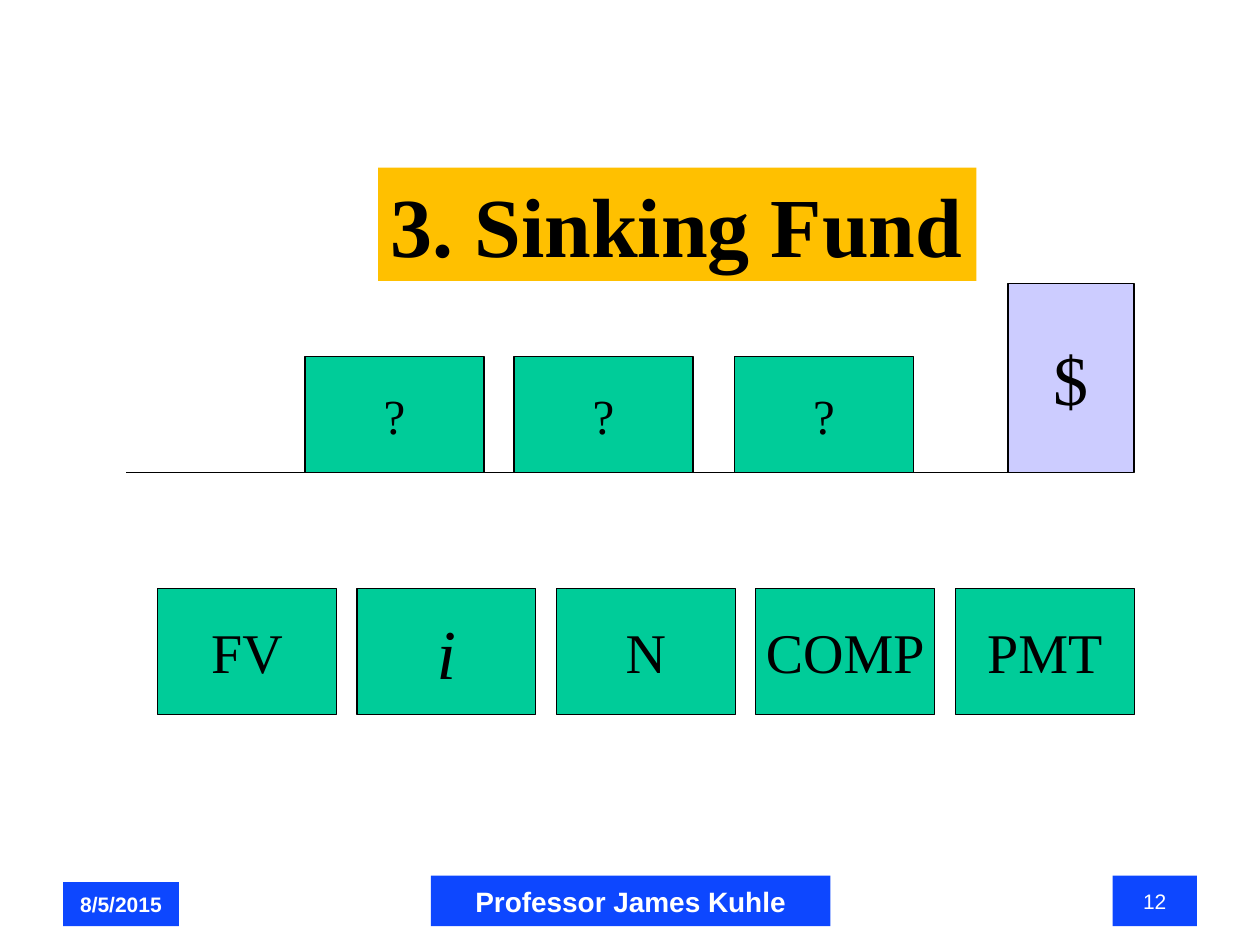
from pptx import Presentation
from pptx.dml.color import RGBColor
from pptx.enum.shapes import MSO_CONNECTOR, MSO_SHAPE
from pptx.enum.text import MSO_ANCHOR, MSO_AUTO_SIZE, PP_ALIGN
from pptx.oxml.ns import qn
from pptx.util import Inches, Pt

TITLE = "3. Sinking Fund"
PAYMENT_LEFTS = [2.42, 4.08, 5.83]
KEYS = [("FV", 32), ("i", 40), ("N", 32), ("COMP", 32), ("PMT", 32)]
FOOTERS = [  # text, left, width, height, size, bold
    ("8/5/2015", 0.5, 0.92, 0.35, 12, True),
    ("Professor James Kuhle", 3.42, 3.17, 0.4, 16, True),
    ("12", 8.83, 0.67, 0.4, 12, False),
]
THEME = {
    "serif": "Times New Roman", "sans": "Arial",
    "black": RGBColor(0, 0, 0), "white": RGBColor(255, 255, 255),
    "green": RGBColor(0x00, 0xCC, 0x99), "lilac": RGBColor(0xCC, 0xCC, 0xFF),
    "gold": RGBColor(0xFF, 0xC0, 0x00), "blue": RGBColor(0x0D, 0x47, 0xFF),
    "title": 48, "payment": 28, "goal": 40,
}
BOX_W, PAYMENT_H, GOAL_H = 1.42, 0.92, 1.5
AXIS_Y, KEY_TOP, FOOTER_BOTTOM = 3.75, 4.67, 7.35
KEY_LEFT, KEY_STEP = 1.25, 1.583


def fill(sp, color):
    sp.fill.solid()
    sp.fill.fore_color.rgb = THEME[color]


def write(sp, text, size, font="serif", color="black", bold=False,
          italic=False, align=PP_ALIGN.CENTER, anchor=MSO_ANCHOR.MIDDLE, wrap=True):
    tf = sp.text_frame
    tf.text = text
    tf.word_wrap = wrap
    tf.vertical_anchor = anchor
    p = tf.paragraphs[0]
    p.alignment = align
    p.font.name = THEME[font]
    p.font.size = Pt(size)
    p.font.bold = bold
    p.font.italic = italic
    p.font.color.rgb = THEME[color]


def add_box(s, left, top, width, height, color, kind=MSO_SHAPE.RECTANGLE, outlined=True):
    sp = s.shapes.add_shape(kind, Inches(left), Inches(top), Inches(width), Inches(height))
    sp.shadow.inherit = False
    fill(sp, color)
    if outlined:
        sp.line.color.rgb = THEME["black"]
        sp.line.width = Pt(0.75)
    else:
        sp.line.fill.background()
    return sp


def add_title(s):
    sp = s.shapes.title
    sp.left, sp.top, sp.width, sp.height = map(Inches, (3, 1.33, 4.75, 0.9))
    fill(sp, "gold")
    write(sp, TITLE, THEME["title"], bold=True, align=PP_ALIGN.LEFT, anchor=MSO_ANCHOR.TOP)
    sp.text_frame.auto_size = MSO_AUTO_SIZE.NONE


def add_timeline(s):
    process = MSO_SHAPE.FLOWCHART_PROCESS
    for left in PAYMENT_LEFTS:
        sp = add_box(s, left, AXIS_Y - PAYMENT_H, BOX_W, PAYMENT_H, "green", process)
        write(sp, "?", THEME["payment"], wrap=False)
    sp = add_box(s, 8, AXIS_Y - GOAL_H, 1, GOAL_H, "lilac", process)
    write(sp, "$", THEME["goal"], wrap=False)

    axis = s.shapes.add_connector(MSO_CONNECTOR.STRAIGHT, Inches(1), Inches(AXIS_Y),
                                  Inches(8.08), Inches(AXIS_Y))
    axis.line.color.rgb = THEME["black"]
    axis.line.width = Pt(1)
    sp_pr = axis._element.spPr
    sp_pr.append(sp_pr.makeelement(qn("a:effectLst"), {}))


def add_keys(s):
    for i, (text, size) in enumerate(KEYS):
        sp = add_box(s, KEY_LEFT + i * KEY_STEP, KEY_TOP, BOX_W, 1, "green")
        write(sp, text, size, italic=text == "i", wrap=False)


def add_footers(s):
    for text, left, width, height, size, bold in FOOTERS:
        sp = add_box(s, left, FOOTER_BOTTOM - height, width, height, "blue", outlined=False)
        write(sp, text, size, "sans", "white", bold)


def main():
    prs = Presentation()
    prs.slide_width, prs.slide_height = Inches(10), Inches(7.5)
    s = prs.slides.add_slide(prs.slide_layouts[5])
    add_title(s)
    add_timeline(s)
    add_keys(s)
    add_footers(s)
    prs.save("out.pptx")


if __name__ == "__main__":
    main()
